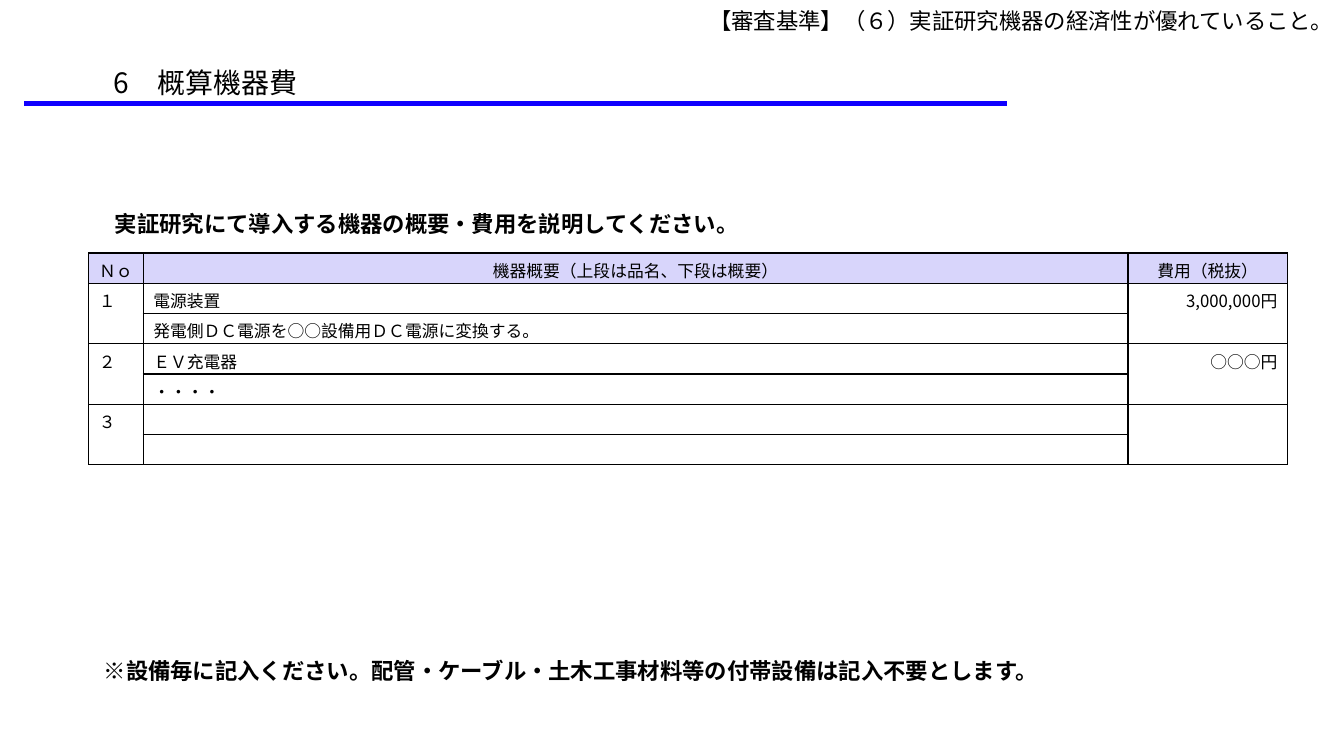
from dataclasses import dataclass

from lxml.etree import SubElement as Sub
from pptx import Presentation
from pptx.dml.color import RGBColor as RGB
from pptx.enum.shapes import MSO_CONNECTOR as CONN
from pptx.enum.text import MSO_ANCHOR as ANCHOR, PP_ALIGN as ALIGN
from pptx.oxml.ns import qn
from pptx.util import Pt


@dataclass(frozen=True)
class Theme:
    font: str = "Noto Sans CJK JP"
    ink: str = "000000"
    rule: str = "1000FF"
    header: str = "D8D5FB"
    title: int = 20
    body: int = 16
    cell: int = 12


theme = Theme()


def write(tf, text, size=theme.body, bold=False, align=ALIGN.LEFT, anchor=ANCHOR.MIDDLE):
    tf.word_wrap = True
    tf.vertical_anchor = anchor
    p = tf.paragraphs[0]
    p.alignment = align
    if not text:
        p._p.get_or_add_endParaRPr().set("sz", str(size * 100))
        return
    r = p.add_run()
    r.text = text
    r.font.size = Pt(size)
    r.font.bold = bold
    r.font.name = theme.font
    r.font.color.rgb = RGB.from_string(theme.ink)
    Sub(r._r.get_or_add_rPr(), qn("a:ea"), typeface=theme.font)


def add_borders(cell):
    tcPr = cell._tc.get_or_add_tcPr()
    for i, side in enumerate(("lnL", "lnR", "lnT", "lnB")):
        ln = Sub(tcPr, qn(f"a:{side}"), w=str(Pt(1)))
        Sub(Sub(ln, qn("a:solidFill")), qn("a:srgbClr"), val=theme.ink)
        tcPr.insert(i, ln)


prs = Presentation()
prs.slide_width, prs.slide_height = Pt(960), Pt(540)
s = prs.slides.add_slide(prs.slide_layouts[5])

rule = s.shapes.add_connector(CONN.STRAIGHT, Pt(17.3), Pt(73.8), Pt(719.3), Pt(73.8))
rule.line.color.rgb = RGB.from_string(theme.rule)
rule.line.width = Pt(3.5)
Sub(rule._element.spPr, qn("a:effectLst"))

title = s.shapes.title
title.left, title.top, title.width, title.height = Pt(74), Pt(42.5), Pt(648), Pt(32)
write(title.text_frame, "6\u3000概算機器費", size=theme.title)

captions = [
    (75, 145, 874, "実証研究にて導入する機器の概要・費用を説明してください。", True, ALIGN.LEFT),
    (367, 0, 593, "【審査基準】（６）実証研究機器の経済性が優れていること。", False, ALIGN.RIGHT),
    (67, 464, 874, "※設備毎に記入ください。配管・ケーブル・土木工事材料等の付帯設備は記入不要とします。", True, ALIGN.LEFT),
]
for left, top, width, text, bold, align in captions:
    sp = s.shapes.add_textbox(Pt(left), Pt(top), Pt(width), Pt(30))
    write(sp.text_frame, text, bold=bold, align=align)

headings = ["Ｎｏ", "機器概要（上段は品名、下段は概要）", "費用（税抜）"]
equipment = [
    ("１", "電源装置", "発電側ＤＣ電源を○○設備用ＤＣ電源に変換する。", "3,000,000円"),
    ("２", "ＥＶ充電器", "・・・・", "○○○円"),
    ("３", "", "", ""),
]
rows = [headings]
for number, name, summary, cost in equipment:
    rows += [[number, name, cost], ["", summary, ""]]

widths = [38.9, 703.4, 114]
row_height = 21.6
frame = s.shapes.add_table(len(rows), len(widths), Pt(63.4), Pt(180.7),
                           Pt(sum(widths)), Pt(row_height * len(rows)))
table = frame.table
table.first_row = table.horz_banding = False
for column, width in zip(table.columns, widths):
    column.width = Pt(width)

for i, row in enumerate(rows):
    table.rows[i].height = Pt(row_height)
    for j, text in enumerate(row):
        cell = table.cell(i, j)
        cell.margin_top, cell.margin_bottom = Pt(3.6), Pt(0)
        cell.vertical_anchor = ANCHOR.TOP
        if i == 0:
            cell.fill.solid()
            cell.fill.fore_color.rgb = RGB.from_string(theme.header)
            align = ALIGN.CENTER
        else:
            cell.fill.background()
            align = ALIGN.RIGHT if j == 2 else ALIGN.LEFT
        add_borders(cell)
        write(cell.text_frame, text, size=theme.cell, align=align, anchor=ANCHOR.TOP)

for i in range(1, len(rows), 2):
    for j in (0, 2):
        table.cell(i, j).merge(table.cell(i + 1, j))

prs.save("out.pptx")
